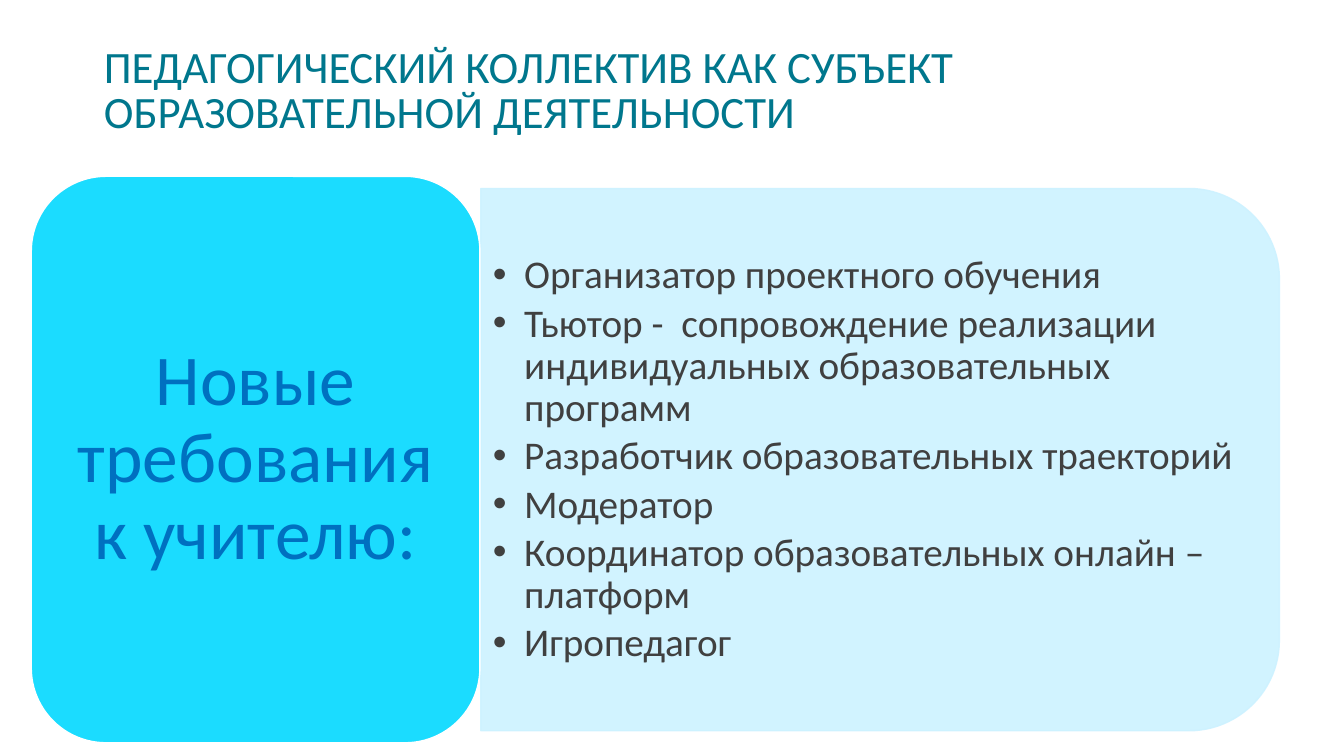
from lxml.etree import SubElement
from pptx import Presentation
from pptx.dml.color import RGBColor
from pptx.enum.shapes import MSO_SHAPE
from pptx.enum.text import MSO_ANCHOR, MSO_AUTO_SIZE, PP_ALIGN
from pptx.oxml.ns import qn
from pptx.util import Inches, Pt


def rgb(value):
    return RGBColor.from_string(value)


class SlideBuilder:
    """Style and current slide; boxes are percentages of the slide size."""

    FONT = "Calibri"
    TEAL, CYAN, PALE = "00778D", "1BDCFF", "CDF2FF"
    BLUE, GREY, WHITE = "0070C0", "404040", "FFFFFF"

    def __init__(self, prs):
        self.prs = prs
        self.s = prs.slides.add_slide(prs.slide_layouts[5])

    def box(self, x, y, w, h):
        sw, sh = self.prs.slide_width, self.prs.slide_height
        return [round(v * size / 100) for v, size in
                ((x, sw), (y, sh), (w, sw), (h, sh))]

    def frame(self, tf, anchor, inset_x, inset_y):
        tf.word_wrap = True
        tf.auto_size = MSO_AUTO_SIZE.NONE
        tf.vertical_anchor = anchor
        tf.margin_left = tf.margin_right = Inches(inset_x)
        tf.margin_top = tf.margin_bottom = Inches(inset_y)

    def add_text(self, p, text, size, color, spacing, align=PP_ALIGN.LEFT, after=0):
        p.alignment, p.line_spacing = align, spacing
        p.space_before, p.space_after = Pt(0), Pt(after)
        r = p.add_run()
        r.text = text
        r.font.name, r.font.size = self.FONT, Pt(size)
        r.font.color.rgb = rgb(color)

    def title(self, text, box):
        sp = self.s.shapes.title
        sp.left, sp.top, sp.width, sp.height = self.box(*box)
        self.frame(sp.text_frame, MSO_ANCHOR.BOTTOM, 0.1, 0.05)
        self.add_text(sp.text_frame.paragraphs[0], text, 32, self.TEAL, 0.85)

    def shape(self, kind, box, fill, line):
        sp = self.s.shapes.add_shape(kind, *self.box(*box))
        sp.shadow.inherit = False
        sp.fill.solid()
        sp.fill.fore_color.rgb = rgb(fill)
        sp.line.color.rgb = rgb(line)
        sp.line.width = Pt(1)
        return sp

    def panel(self, box):
        """Panel rounded on its right side: a quarter-turned tab shape."""
        sp = self.shape(MSO_SHAPE.ROUND_2_SAME_RECTANGLE, box, self.PALE, self.PALE)
        w, h = sp.width, sp.height
        sp.left, sp.top = sp.left + (w - h) // 2, sp.top + (h - w) // 2
        sp.width, sp.height, sp.rotation = h, w, 90
        for clr in sp._element.spPr.iter(qn("a:srgbClr")):
            SubElement(clr, qn("a:alpha"), val="90000")

    def card(self, text, box):
        sp = self.shape(MSO_SHAPE.ROUNDED_RECTANGLE, box, self.CYAN, self.WHITE)
        self.frame(sp.text_frame, MSO_ANCHOR.MIDDLE, 0.21, 0.11)
        self.add_text(sp.text_frame.paragraphs[0], text, 51, self.BLUE, 0.9,
                      PP_ALIGN.CENTER, after=17.85)

    def bullets(self, items, box):
        tf = self.s.shapes.add_textbox(*self.box(*box)).text_frame
        self.frame(tf, MSO_ANCHOR.MIDDLE, 0.12, 0.06)
        for i, item in enumerate(items):
            p = tf.add_paragraph() if i else tf.paragraphs[0]
            pPr = p._p.get_or_add_pPr()
            pPr.set("marL", str(Inches(0.31)))
            pPr.set("indent", str(-Inches(0.31)))
            SubElement(pPr, qn("a:buFont"), typeface="Arial")
            SubElement(pPr, qn("a:buChar"), char="•")
            self.add_text(p, item, 28, self.GREY, 0.9, after=4.2)


def main():
    prs = Presentation()
    prs.slide_width, prs.slide_height = Inches(13.33), Inches(7.5)
    slide = SlideBuilder(prs)

    # Heading
    slide.title("ПЕДАГОГИЧЕСКИЙ КОЛЛЕКТИВ КАК СУБЪЕКТ ОБРАЗОВАТЕЛЬНОЙ ДЕЯТЕЛЬНОСТИ",
                (6.98, 0, 86.12, 18.93))

    # Roles on the pale panel
    slide.panel((35.78, 24.93, 59.41, 71.73))
    slide.bullets([
        "Организатор проектного обучения",
        "Тьютор -  сопровождение реализации индивидуальных образовательных программ",
        "Разработчик образовательных траекторий",
        "Модератор",
        "Координатор образовательных онлайн – платформ",
        "Игропедагог",
    ], (35.78, 28.53, 57.46, 64.67))

    # Topic card
    slide.card("Новые требования к учителю:", (2.33, 23.33, 33.38, 74.93))

    prs.save("out.pptx")


if __name__ == "__main__":
    main()
